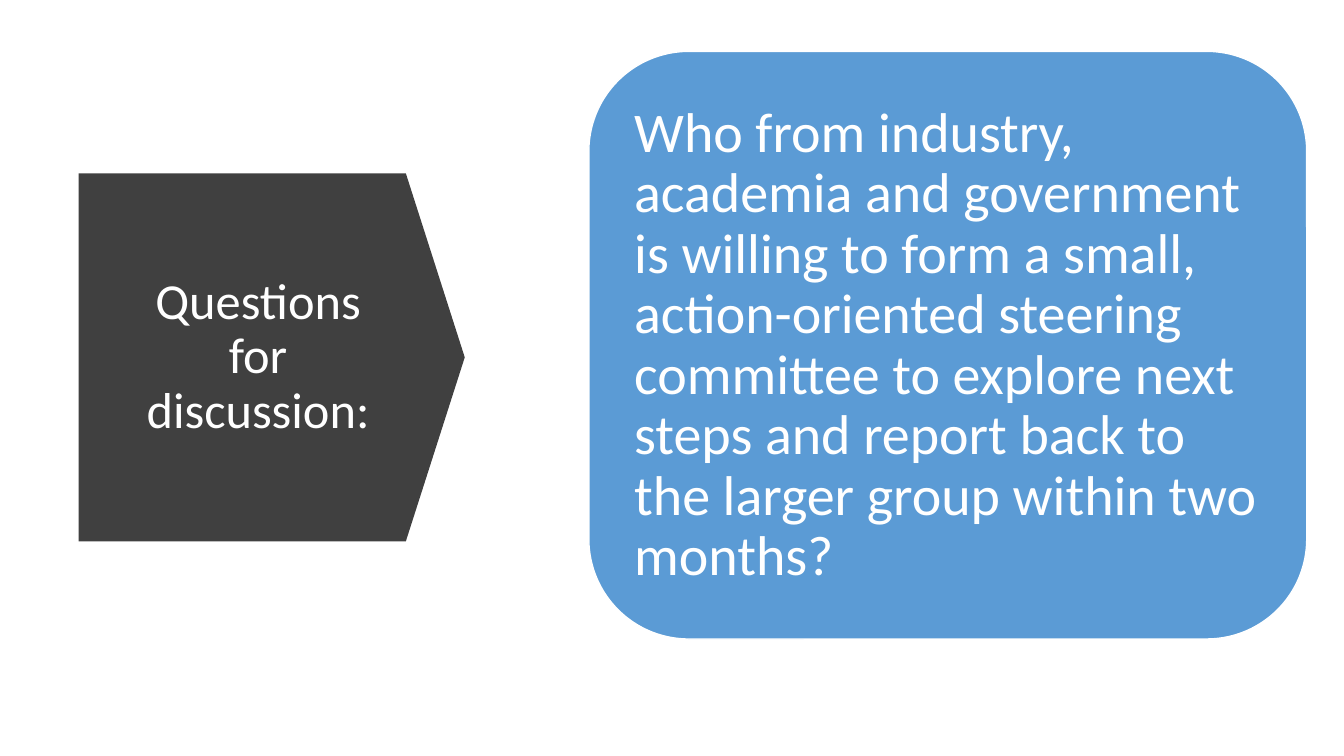
from pptx import Presentation
from pptx.dml.color import RGBColor
from pptx.enum.shapes import MSO_SHAPE
from pptx.enum.text import MSO_ANCHOR, PP_ALIGN
from pptx.util import Inches, Pt

WHITE = RGBColor(0xFF, 0xFF, 0xFF)
CHARCOAL = RGBColor(0x40, 0x40, 0x40)
BLUE = RGBColor(0x5B, 0x9B, 0xD5)


def write_text(frame, text, size, font="Calibri", color=WHITE,
               align=PP_ALIGN.LEFT, line_spacing=0.9):
    paragraph = frame.paragraphs[0]
    paragraph.alignment = align
    paragraph.line_spacing = line_spacing
    run = paragraph.add_run()
    run.text = text
    run.font.name = font
    run.font.size = Pt(size)
    run.font.color.rgb = color


class DiscussionSlide:
    def __init__(self, presentation):
        self.slide = presentation.slides.add_slide(presentation.slide_layouts[6])

    def panel(self, kind, left, top, width, height, fill, adjustment, outline=None):
        shape = self.slide.shapes.add_shape(
            kind, Inches(left), Inches(top), Inches(width), Inches(height))
        shape.shadow.inherit = False
        shape.adjustments[0] = adjustment
        shape.fill.solid()
        shape.fill.fore_color.rgb = fill
        if outline is None:
            shape.line.fill.background()
        else:
            shape.line.color.rgb = outline
            shape.line.width = Pt(1)

    def label(self, text, left, top, width, height, side_inset, end_inset, **style):
        box = self.slide.shapes.add_textbox(
            Inches(left), Inches(top), Inches(width), Inches(height))
        frame = box.text_frame
        frame.word_wrap = True
        frame.vertical_anchor = MSO_ANCHOR.MIDDLE
        frame.margin_left = frame.margin_right = Inches(side_inset)
        frame.margin_top = frame.margin_bottom = Inches(end_inset)
        write_text(frame, text, **style)


def main():
    presentation = Presentation()
    presentation.slide_width = Inches(13.33)
    presentation.slide_height = Inches(7.5)

    discussion = DiscussionSlide(presentation)
    discussion.panel(MSO_SHAPE.PENTAGON, 0.78, 1.72, 3.83, 3.65, CHARCOAL, 0.16)
    discussion.label("Questions for discussion:", 1.12, 2.15, 2.88, 2.79,
                     0.1, 0.05, size=36, align=PP_ALIGN.CENTER)
    discussion.panel(MSO_SHAPE.ROUNDED_RECTANGLE, 5.84, 0.51, 7.12, 5.83,
                     BLUE, 0.17, outline=WHITE)
    discussion.label(
        "Who from industry, academia and government is willing to form a small, "
        "action-oriented steering committee to explore next steps and report back "
        "to the larger group within two months?",
        6.12, 0.8, 6.55, 5.26, 0.17, 0.17, size=40)

    presentation.save("out.pptx")


if __name__ == "__main__":
    main()
